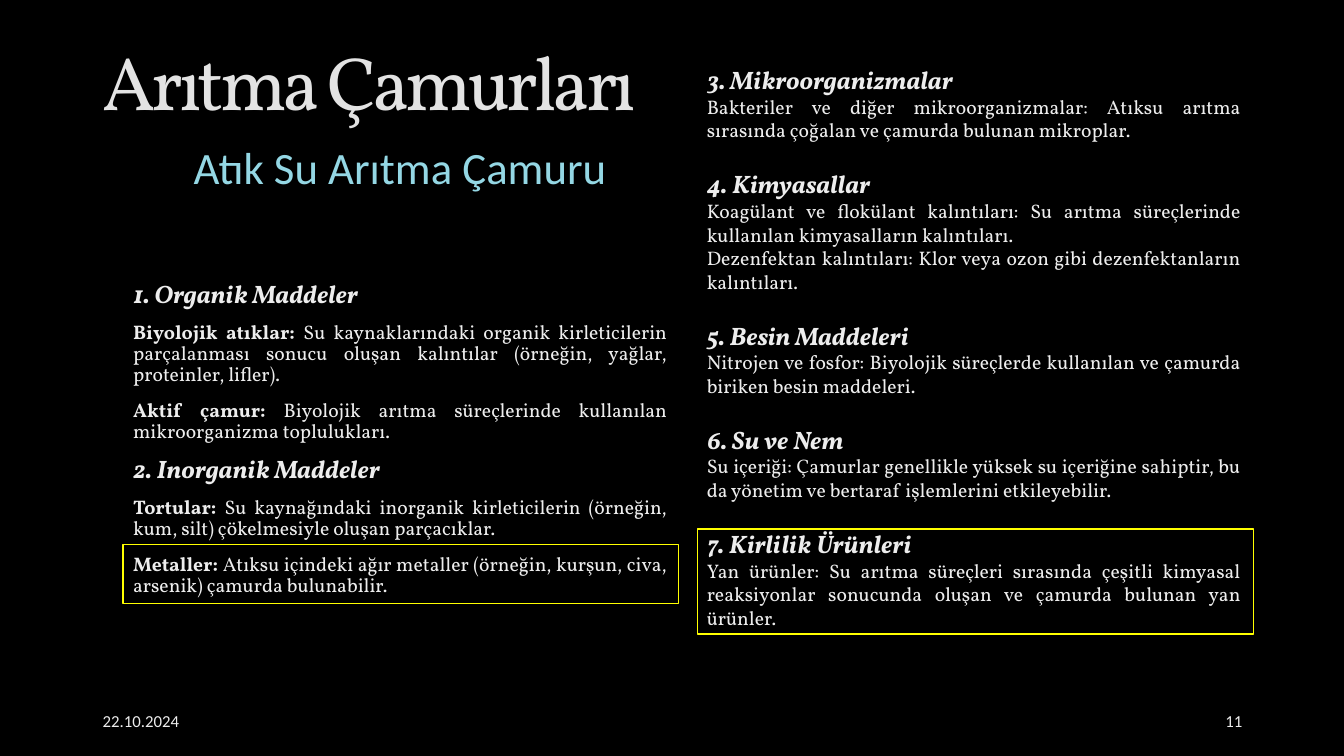
from dataclasses import dataclass

from lxml import etree
from pptx import Presentation
from pptx.dml.color import RGBColor
from pptx.enum.shapes import MSO_SHAPE
from pptx.enum.text import MSO_ANCHOR, MSO_AUTO_SIZE, PP_ALIGN
from pptx.oxml.ns import qn
from pptx.util import Inches, Pt

LEFT, CENTER = PP_ALIGN.LEFT, PP_ALIGN.CENTER
RIGHT, JUSTIFY = PP_ALIGN.RIGHT, PP_ALIGN.JUSTIFY
TOP, MIDDLE = MSO_ANCHOR.TOP, MSO_ANCHOR.MIDDLE
NO_AUTOFIT = MSO_AUTO_SIZE.NONE
RECTANGLE = MSO_SHAPE.RECTANGLE
COMPARISON_LAYOUT = 3 + 1


@dataclass(frozen=True)
class Theme:
    """Colours, fonts and type sizes of the slide."""
    background: RGBColor = RGBColor(0x00, 0x00, 0x00)
    title: RGBColor = RGBColor(0xE3, 0xE3, 0xE3)
    subtitle: RGBColor = RGBColor(0x94, 0xD7, 0xE4)
    text: RGBColor = RGBColor(0xED, 0xED, 0xED)
    frame: RGBColor = RGBColor(0xFF, 0xFF, 0x00)
    serif: str = "Vollkorn"
    sans: str = "Calibri"
    title_size: int = 54
    subtitle_size: int = 32
    heading_size: int = 18
    body_size: int = 14
    footer_size: int = 12


THEME = Theme()

LEFT_SECTIONS = [
    ("1. Organik Maddeler", [
        ("Biyolojik atıklar:", " Su kaynaklarındaki organik kirleticilerin parçalanması "
                               "sonucu oluşan kalıntılar (örneğin, yağlar, proteinler, lifler)."),
        ("Aktif çamur:", " Biyolojik arıtma süreçlerinde kullanılan mikroorganizma toplulukları."),
    ]),
    ("2. Inorganik Maddeler", [
        ("Tortular:", " Su kaynağındaki inorganik kirleticilerin (örneğin, kum, silt) "
                      "çökelmesiyle oluşan parçacıklar."),
        ("Metaller: ", "Atıksu içindeki ağır metaller (örneğin, kurşun, civa, arsenik) "
                       "çamurda bulunabilir."),
    ]),
]

RIGHT_SECTIONS = [
    ("3. Mikroorganizmalar", [
        ("", "Bakteriler ve diğer mikroorganizmalar: Atıksu arıtma sırasında çoğalan "
             "ve çamurda bulunan mikroplar."),
    ]),
    ("4. Kimyasallar", [
        ("", "Koagülant ve flokülant kalıntıları: Su arıtma süreçlerinde kullanılan "
             "kimyasalların kalıntıları."),
        ("", "Dezenfektan kalıntıları: Klor veya ozon gibi dezenfektanların kalıntıları."),
    ]),
    ("5. Besin Maddeleri", [
        ("", "Nitrojen ve fosfor: Biyolojik süreçlerde kullanılan ve çamurda biriken "
             "besin maddeleri."),
    ]),
    ("6. Su ve Nem", [
        ("", "Su içeriği: Çamurlar genellikle yüksek su içeriğine sahiptir, bu da yönetim "
             "ve bertaraf işlemlerini etkileyebilir."),
    ]),
    ("7. Kirlilik Ürünleri", [
        ("", "Yan ürünler: Su arıtma süreçleri sırasında çeşitli kimyasal reaksiyonlar "
             "sonucunda oluşan ve çamurda bulunan yan ürünler."),
    ]),
]


def place(shape, box, anchor=TOP):
    """Move a text shape to its box and return its text frame."""
    shape.left, shape.top, shape.width, shape.height = (Inches(length) for length in box)
    frame = shape.text_frame
    frame.word_wrap = True
    frame.auto_size = NO_AUTOFIT
    frame.vertical_anchor = anchor
    return frame


def style(para, size, color, font, align, bold=False, italic=False, spacing=1.0, before=0):
    """Format a paragraph without a bullet or indent."""
    properties = para._p.get_or_add_pPr()
    properties.set("marL", "0")
    properties.set("indent", "0")
    etree.SubElement(properties, qn("a:buNone"))
    para.alignment = align
    para.line_spacing = spacing
    para.space_before = Pt(before)
    para.font.size = Pt(size)
    para.font.name = font
    para.font.bold = bold
    para.font.italic = italic
    para.font.color.rgb = color


def add_heading(page, title_box, subtitle_box):
    """Fill the title and the subtitle placeholders."""
    para = place(page.shapes.title, title_box).paragraphs[0]
    span = para.add_run()
    span.text = "Arıtma Çamurları"
    span.font._element.set("spc", "-300")
    style(para, THEME.title_size, THEME.title, THEME.serif, LEFT, spacing=0.9)
    para = place(page.placeholders[1], subtitle_box).paragraphs[0]
    para.add_run().text = "Atık Su Arıtma Çamuru"
    style(para, THEME.subtitle_size, THEME.subtitle, THEME.sans, CENTER, spacing=0.9)


def add_column(placeholder, box, sections, spacing, section_gap, item_gap):
    """Write headed sections into a body placeholder."""
    frame = place(placeholder, box)
    for number, (heading, items) in enumerate(sections):
        para = frame.add_paragraph() if number else frame.paragraphs[0]
        para.add_run().text = heading
        style(para, THEME.heading_size, THEME.text, THEME.serif, JUSTIFY, True, True,
              spacing, section_gap if number else 0)
        for label, text in items:
            para = frame.add_paragraph()
            style(para, THEME.body_size, THEME.text, THEME.serif, JUSTIFY,
                  spacing=spacing, before=item_gap)
            if label:
                span = para.add_run()
                span.text = label
                span.font.bold = True
            para.add_run().text = text


def add_frame(page, box):
    """Outline a passage with a thin rectangle."""
    shape = page.shapes.add_shape(RECTANGLE, *(Inches(length) for length in box))
    shape.shadow.inherit = False
    shape.fill.background()
    shape.line.color.rgb = THEME.frame
    shape.line.width = Pt(1)


def add_footer(page, box, text, align):
    """Add one footer text."""
    shape = page.shapes.add_textbox(*(Inches(length) for length in box))
    para = place(shape, box, MIDDLE).paragraphs[0]
    para.add_run().text = text
    style(para, THEME.footer_size, THEME.text, THEME.sans, align)


def build_sludge_slide(deck):
    """Build the slide on the contents of treatment sludge."""
    page = deck.slides.add_slide(deck.slide_layouts[COMPARISON_LAYOUT])
    page.background.fill.solid()
    page.background.fill.fore_color.rgb = THEME.background
    unused = page.placeholders[3]._element
    unused.getparent().remove(unused)
    add_heading(page, (0.92, 0.4, 11.5, 1.45), (1.22, 1.4, 5.5, 0.9))
    add_column(page.placeholders[2], (1.22, 2.74, 5.5, 4.03), LEFT_SECTIONS, 0.9, 10, 10)
    add_column(page.placeholders[4], (6.91, 0.59, 5.5, 5.86), RIGHT_SECTIONS, 1.0, 19.2, 0)
    add_frame(page, (1.22, 5.4, 5.51, 0.59))
    add_frame(page, (6.92, 5.25, 5.51, 1.04))
    add_footer(page, (0.92, 6.95, 3, 0.4), "22.10.2024", LEFT)
    add_footer(page, (9.42, 6.95, 3, 0.4), "11", RIGHT)


def main():
    """Create and save the deck."""
    deck = Presentation()
    deck.slide_width, deck.slide_height = Inches(13.33), Inches(7.5)
    build_sludge_slide(deck)
    deck.save("out.pptx")


if __name__ == "__main__":
    main()
